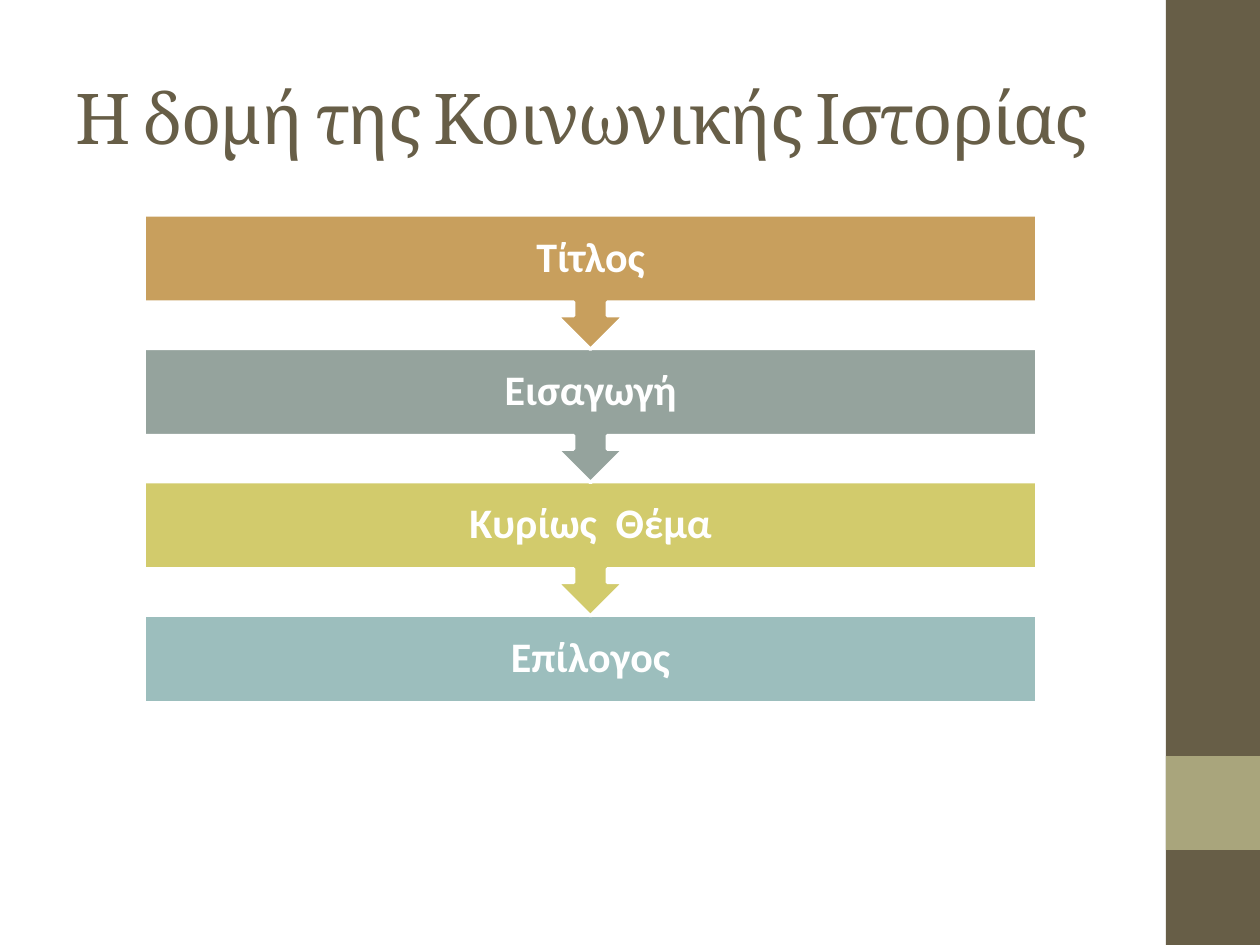
from pptx import Presentation
from pptx.dml.color import RGBColor
from pptx.enum.shapes import MSO_SHAPE
from pptx.enum.text import MSO_ANCHOR, PP_ALIGN
from pptx.util import Pt

PX = 914400 // 126
RECT = MSO_SHAPE.RECTANGLE
CALLOUT = MSO_SHAPE.DOWN_ARROW_CALLOUT
MIDDLE = MSO_ANCHOR.MIDDLE
CENTER = PP_ALIGN.CENTER

COLORS = {
    "brown": "675E47", "olive": "A9A57C", "white": "FFFFFF",
    "tan": "C89F5D", "sage": "95A39D", "lime": "D2CB6C", "teal": "9CBEBD",
}
STEPS = [("Τίτλος", "tan"), ("Εισαγωγή", "sage"),
         ("Κυρίως  Θέμα", "lime"), ("Επίλογος", "teal")]


def rgb(name):
    return RGBColor.from_string(COLORS[name])


def emu(*box):
    return [round(n * PX) for n in box]


def add_block(slide, kind, box, color):
    shape = slide.shapes.add_shape(kind, *emu(*box))
    shape.shadow.inherit = False
    shape.fill.solid()
    shape.fill.fore_color.rgb = rgb(color)
    shape.line.fill.background()
    return shape


def write(frame, text, font, size, color, bold=False):
    frame.word_wrap = True
    frame.vertical_anchor = MIDDLE
    para = frame.paragraphs[0]
    para.add_run().text = text
    para.font.name = font
    para.font.size = Pt(size)
    para.font.bold = bold
    para.font.color.rgb = rgb(color)
    return para


def add_side(slide, left, top, width, height):
    # Dark band with a light square
    add_block(slide, RECT, (left, top, width, height), "brown")
    add_block(slide, RECT, (left, top + height * 0.8, width, width), "olive")


def add_title(slide, *box):
    frame = slide.shapes.add_textbox(*emu(*box)).text_frame
    para = write(frame, "Η δομή της Κοινωνικής Ιστορίας", "Cambria", 40, "brown")
    # Tighter letters, in hundredths of a point
    para.runs[0].font._element.set("spc", "-100")


def add_flow(slide, left, top, width, height):
    # Equal steps; all but the last point down to the next
    bar = 88
    gap = (height - bar) / (len(STEPS) - 1)
    last = len(STEPS) - 1
    for i in range(last, -1, -1):
        text, color = STEPS[i]
        kind, tall = (RECT, bar) if i == last else (CALLOUT, gap + 1)
        shape = add_block(slide, kind, (left, top + i * gap, width, tall), color)
        shape.line.color.rgb = rgb("white")
        shape.line.width = Pt(2)
        para = write(shape.text_frame, text, "Calibri", 24, "white", True)
        para.alignment = CENTER
        para.line_spacing = 0.9


def main():
    deck = Presentation()
    deck.slide_width, deck.slide_height = emu(1260, 945)
    slide = deck.slides.add_slide(deck.slide_layouts[6])
    add_side(slide, 1166, 0, 94, 945)
    add_title(slide, 63, 38, 1050, 157)
    add_flow(slide, 144, 215, 893, 488)
    deck.save("out.pptx")


if __name__ == "__main__":
    main()
